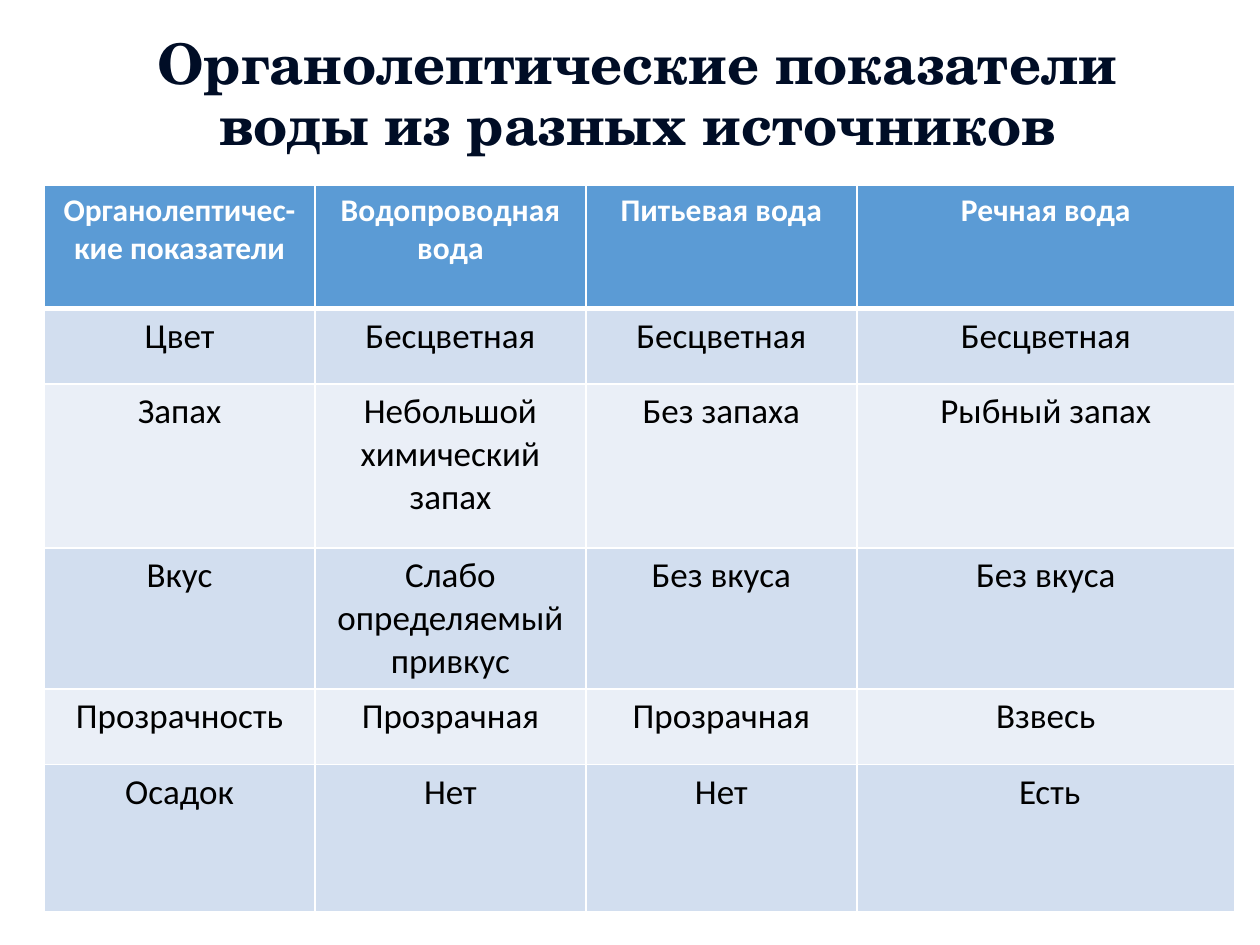
from pptx import Presentation
from pptx.dml.color import RGBColor
from pptx.enum.text import MSO_ANCHOR, PP_ALIGN
from pptx.oxml import parse_xml
from pptx.oxml.ns import nsdecls
from pptx.util import Pt

WHITE = RGBColor(0xFF, 0xFF, 0xFF)
BLACK = RGBColor(0x00, 0x00, 0x00)
NAVY = RGBColor(0x00, 0x0D, 0x26)
HEADER_BLUE = RGBColor(0x5B, 0x9B, 0xD5)
BAND_COLORS = (RGBColor(0xEA, 0xEF, 0xF7), RGBColor(0xD2, 0xDE, 0xEF))

TITLE = "Органолептические показатели воды из разных источников"
WATER_ROWS = [
    ["Органолептичес-\nкие показатели", "Водопроводная вода", "Питьевая вода", "Речная вода"],
    ["Цвет", "Бесцветная", "Бесцветная", "Бесцветная"],
    ["Запах", "Небольшой химический запах", "Без запаха", "Рыбный запах"],
    ["Вкус", "Слабо определяемый привкус", "Без вкуса", "Без вкуса"],
    ["Прозрачность", "Прозрачная", "Прозрачная", "Взвесь"],
    ["Осадок", "Нет", "Нет", " Есть"],
]
COLUMN_WIDTHS = [154.8, 154.8, 154.8, 216]
ROW_HEIGHTS = [70.5, 43.2, 93.6, 73.5, 43.2, 84.2]


def write_text(text_frame, text, *, font, size, color, bold=False, line_spacing=None):
    text_frame.text = text
    for paragraph in text_frame.paragraphs:
        paragraph.alignment = PP_ALIGN.CENTER
        paragraph.line_spacing = line_spacing
        for run in paragraph.runs:
            run.font.name = font
            run.font.size = Pt(size)
            run.font.bold = bold
            run.font.color.rgb = color


class SlideBuilder:
    title_font = "TeX Gyre Schola"
    body_font = "Calibri"
    border_width = 1
    header_rule_width = 3

    def __init__(self, slide):
        self.slide = slide

    def add_title(self, text, left, top, width, height):
        title = self.slide.shapes.title
        title.left, title.top = Pt(left), Pt(top)
        title.width, title.height = Pt(width), Pt(height)
        title.text_frame.word_wrap = True
        title.text_frame.vertical_anchor = MSO_ANCHOR.MIDDLE
        write_text(title.text_frame, text, font=self.title_font, size=32,
                   color=NAVY, bold=True, line_spacing=0.9)

    def add_table(self, rows, left, top, column_widths, row_heights):
        shape = self.slide.shapes.add_table(
            len(rows), len(column_widths), Pt(left), Pt(top),
            Pt(sum(column_widths)), Pt(sum(row_heights)))
        table = shape.table
        for column, width in zip(table.columns, column_widths):
            column.width = Pt(width)
        for row, height in zip(table.rows, row_heights):
            row.height = Pt(height)
        for row_index, texts in enumerate(rows):
            for column_index, text in enumerate(texts):
                self.format_cell(table.cell(row_index, column_index), text, row_index)

    def format_cell(self, cell, text, row_index):
        is_header = row_index == 0
        top_width = self.header_rule_width if row_index == 1 else self.border_width
        bottom_width = self.header_rule_width if is_header else self.border_width
        self.add_borders(cell, L=self.border_width, R=self.border_width,
                         T=top_width, B=bottom_width)
        cell.fill.solid()
        cell.fill.fore_color.rgb = HEADER_BLUE if is_header else BAND_COLORS[row_index % 2]
        write_text(cell.text_frame, text, font=self.body_font,
                   size=18 if is_header else 20,
                   color=WHITE if is_header else BLACK, bold=is_header)

    def add_borders(self, cell, **widths):
        properties = cell._tc.get_or_add_tcPr()
        for side, width in widths.items():
            properties.append(parse_xml(
                f'<a:ln{side} {nsdecls("a")} w="{Pt(width)}"><a:solidFill>'
                f'<a:srgbClr val="{WHITE}"/></a:solidFill></a:ln{side}>'))


def main():
    presentation = Presentation()
    presentation.slide_width = Pt(720)
    presentation.slide_height = Pt(540)
    builder = SlideBuilder(presentation.slides.add_slide(presentation.slide_layouts[5]))
    builder.add_title(TITLE, 54, 0, 620.6, 110.9)
    builder.add_table(WATER_ROWS, 25.2, 105.8, COLUMN_WIDTHS, ROW_HEIGHTS)
    presentation.save("out.pptx")


if __name__ == "__main__":
    main()
